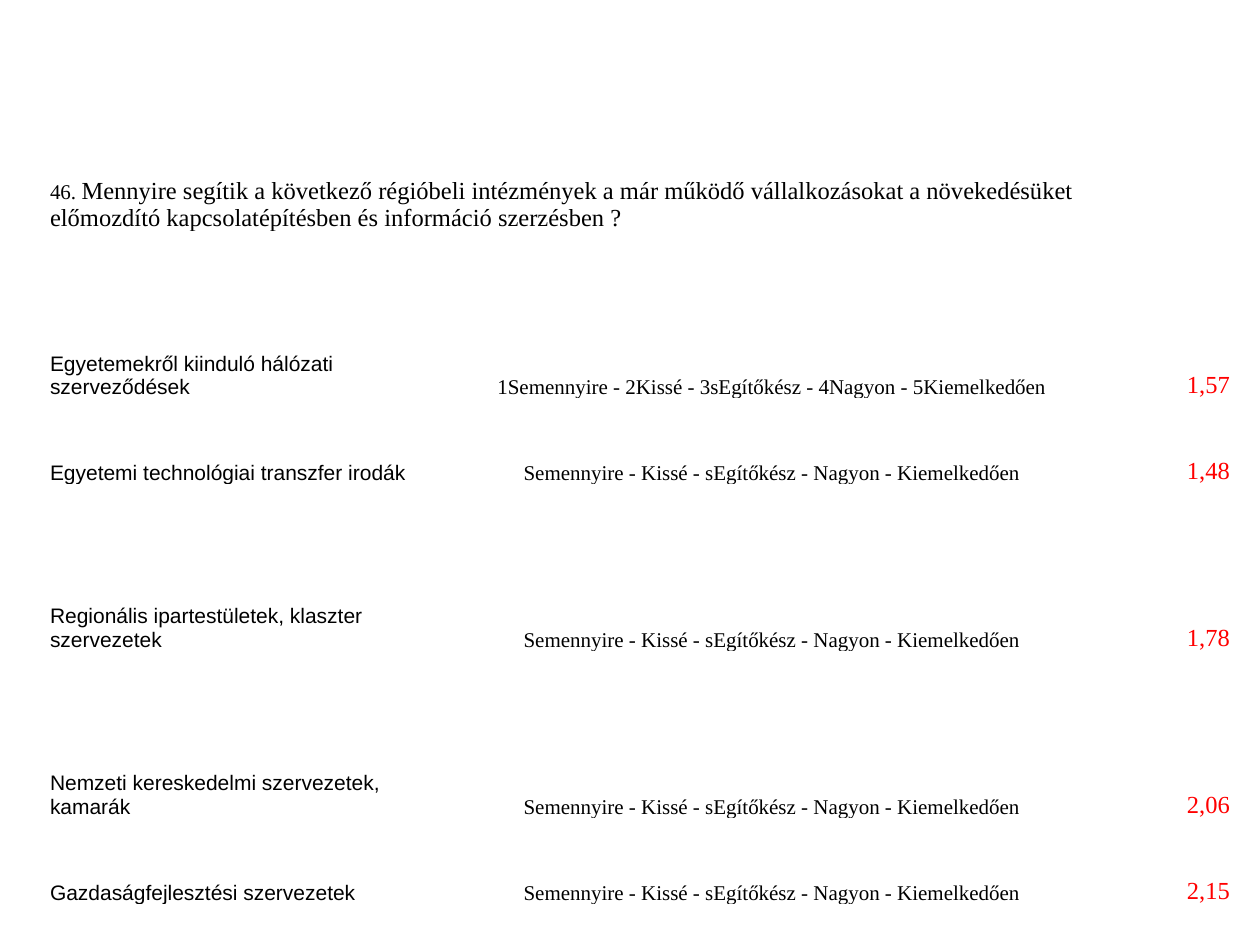
from pptx import Presentation
from pptx.dml.color import RGBColor
from pptx.enum.text import MSO_ANCHOR, PP_ALIGN
from pptx.util import Emu, Pt

PX = 914400 / 126
COLORS = {"text": "000000", "score": "FF0000"}
SANS, SERIF = "Arial", "Times New Roman"
COLUMN_WIDTHS = [410, 626, 73, 73]
ROW_HEIGHTS = [193, 167, 86, 167, 167, 86]
QUESTION_NUMBER = "46. "
QUESTION = (
    "Mennyire segítik a következő régióbeli intézmények a már működő "
    "vállalkozásokat a növekedésüket előmozdító kapcsolatépítésben és "
    "információ szerzésben ?"
)
NUMBERED_SCALE = "1Semennyire - 2Kissé - 3sEgítőkész - 4Nagyon - 5Kiemelkedően"
SCALE = "Semennyire - Kissé - sEgítőkész - Nagyon - Kiemelkedően"
RATINGS = [
    ("Egyetemekről kiinduló hálózati szerveződések", NUMBERED_SCALE, "1,57"),
    ("Egyetemi technológiai transzfer irodák", SCALE, "1,48"),
    ("Regionális ipartestületek, klaszter szervezetek", SCALE, "1,78"),
    ("Nemzeti kereskedelmi szervezetek, kamarák", SCALE, "2,06"),
    ("Gazdaságfejlesztési szervezetek", SCALE, "2,15"),
]


def px(length):
    return Emu(round(length * PX))


def add_span(cell, text, font, size, color="text", align=PP_ALIGN.LEFT):
    para = cell.text_frame.paragraphs[0]
    para.alignment = align
    span = para.add_run()
    span.text = text
    span.font.name = font
    span.font.size = Pt(size)
    span.font.color.rgb = RGBColor.from_string(COLORS[color])


def add_plain_table(page, left, top):
    """Add an unfilled table with bottom-anchored cells and narrow margins."""
    table = page.shapes.add_table(
        len(ROW_HEIGHTS), len(COLUMN_WIDTHS), px(left), px(top),
        px(sum(COLUMN_WIDTHS)), px(sum(ROW_HEIGHTS)),
    ).table
    table.first_row = table.horz_banding = False
    for column, width in zip(table.columns, COLUMN_WIDTHS):
        column.width = px(width)
    for row, height in zip(table.rows, ROW_HEIGHTS):
        row.height = px(height)
    for cell in table.iter_cells():
        cell.fill.background()
        cell.vertical_anchor = MSO_ANCHOR.BOTTOM
        cell.margin_left = cell.margin_right = cell.margin_top = px(1)
        cell.margin_bottom = 0
    return table


def fill_question(table):
    question = table.cell(0, 0)
    question.merge(table.cell(0, 1))
    add_span(question, QUESTION_NUMBER, SERIF, 12)
    add_span(question, QUESTION, SERIF, 14)


def fill_ratings(table):
    for row, (institution, scale, score) in enumerate(RATINGS, start=1):
        add_span(table.cell(row, 0), institution, SANS, 12)
        add_span(table.cell(row, 1), scale, SERIF, 12, align=PP_ALIGN.CENTER)
        add_span(table.cell(row, 3), score, SERIF, 14, "score", PP_ALIGN.RIGHT)


def main():
    deck = Presentation()
    deck.slide_width, deck.slide_height = px(1260), px(945)
    page = deck.slides.add_slide(deck.slide_layouts.get_by_name("Blank"))
    table = add_plain_table(page, 49, 39)
    fill_question(table)
    fill_ratings(table)
    deck.save("out.pptx")


if __name__ == "__main__":
    main()
